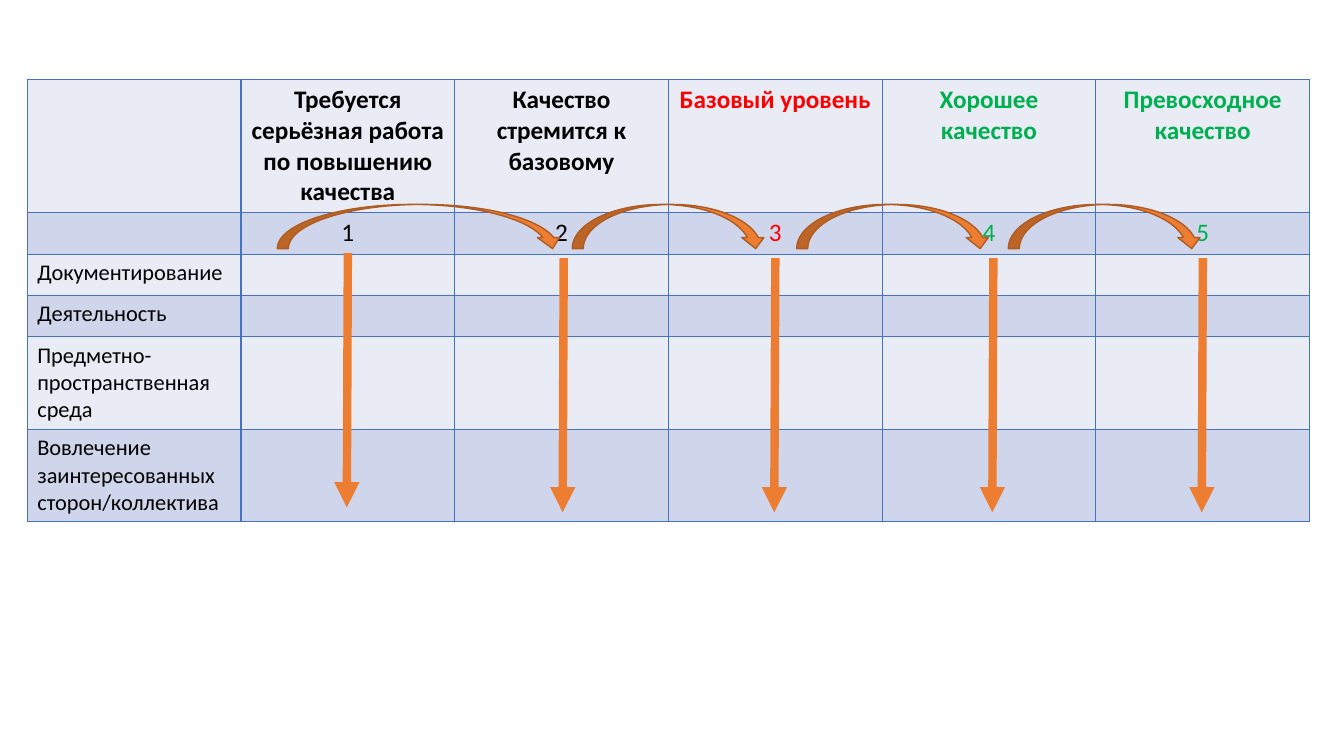
from dataclasses import dataclass

from lxml import etree
from pptx import Presentation
from pptx.dml.color import RGBColor
from pptx.enum.shapes import MSO_CONNECTOR, MSO_SHAPE
from pptx.enum.text import PP_ALIGN
from pptx.oxml.ns import qn
from pptx.util import Inches, Pt

STRAIGHT = MSO_CONNECTOR.STRAIGHT
CURVED_DOWN = MSO_SHAPE.CURVED_DOWN_ARROW
LEFT, CENTER = PP_ALIGN.LEFT, PP_ALIGN.CENTER


@dataclass(frozen=True)
class Theme:
    font: str = "Calibri"
    heading_size: int = 18
    criterion_size: int = 16
    black: str = "000000"
    red: str = "FF0000"
    green: str = "00B050"
    border: str = "4472C4"
    bands: tuple[str, str] = ("E9EBF5", "CFD5EA")
    arrow: str = "ED7D31"
    arrow_edge: str = "AF5C24"
    arrow_width: int = 6
    thin_width: int = 1


@dataclass(frozen=True)
class Grid:
    """Table origin, column width and single-row height, in inches."""
    left: float = 0.27
    top: float = 0.79
    column: float = 2.12
    row: float = 0.41

    def x(self, columns: float) -> int:
        return Inches(self.left + columns * self.column)

    def y(self, rows: float) -> int:
        return Inches(self.top + rows * self.row)

    def width(self, columns: float) -> int:
        return Inches(columns * self.column)

    def height(self, rows: float) -> int:
        return Inches(rows * self.row)


THEME = Theme()
GRID = Grid()


@dataclass(frozen=True)
class Level:
    """A quality level and its down arrow, placed in grid units."""
    title: str
    color: str
    arrow_column: float
    arrow_row: float = 4.32


@dataclass(frozen=True)
class Criterion:
    title: str
    rows: float


@dataclass(frozen=True)
class Step:
    """A curved arrow from one level to the next, in grid columns."""
    start: float
    span: float = 0.91


LEVELS = [
    Level("Требуется серьёзная работа по повышению качества", THEME.black, 1.5, 4.2),
    Level("Качество стремится к базовому", THEME.black, 2.51),
    Level("Базовый уровень", THEME.red, 3.5),
    Level("Хорошее качество", THEME.green, 4.52),
    Level("Превосходное качество", THEME.green, 5.5),
]
CRITERIA = [
    Criterion("Документирование", 1),
    Criterion("Деятельность", 1),
    Criterion("Предметно-пространственная среда", 2.24),
    Criterion("Вовлечение заинтересованных сторон/коллектива", 2.24),
]
STEPS = [Step(1.17, 1.34), Step(2.55), Step(3.6), Step(4.59)]

HEADER_ROWS = [3.22, 1]
DOWN_ARROW_ROWS = 6.15
DOWN_ARROW_LEAN = 0.005
STEP_TOP, STEP_ROWS = 3.02, 1.07


def rgb(color: str) -> RGBColor:
    return RGBColor.from_string(color)


def style_cell(cell, band: str) -> None:
    properties = cell._tc.get_or_add_tcPr()
    for side in ("a:lnL", "a:lnR", "a:lnT", "a:lnB"):
        edge = etree.SubElement(properties, qn(side), w=str(Pt(THEME.thin_width)))
        fill = etree.SubElement(edge, qn("a:solidFill"))
        etree.SubElement(fill, qn("a:srgbClr"), val=THEME.border)
    cell.fill.solid()
    cell.fill.fore_color.rgb = rgb(band)


def write_cell(cell, text: str, color: str, size: int, align, bold: bool = False) -> None:
    paragraph = cell.text_frame.paragraphs[0]
    paragraph.alignment = align
    run = paragraph.add_run()
    run.text = text
    font_format = {"name": THEME.font, "size": Pt(size), "bold": bold}
    for name, value in font_format.items():
        setattr(run.font, name, value)
    run.font.color.rgb = rgb(color)


def draw_table(slide) -> None:
    heights = HEADER_ROWS + [criterion.rows for criterion in CRITERIA]
    columns = len(LEVELS) + 1
    rubric = slide.shapes.add_table(
        len(heights), columns, GRID.x(0), GRID.y(0),
        GRID.width(columns), GRID.height(sum(heights))).table
    for flag, value in {"first_row": False, "horz_banding": False}.items():
        setattr(rubric, flag, value)

    # Grid and banding
    for column in rubric.columns:
        column.width = GRID.width(1)
    for index, rows in enumerate(heights):
        rubric.rows[index].height = GRID.height(rows)
        for cell in rubric.rows[index].cells:
            style_cell(cell, THEME.bands[index % 2])

    # Level titles and scores
    for score, level in enumerate(LEVELS, start=1):
        write_cell(rubric.cell(0, score), level.title, level.color,
                   THEME.heading_size, CENTER, bold=True)
        write_cell(rubric.cell(1, score), str(score), level.color,
                   THEME.heading_size, CENTER)

    # Criteria
    for index, criterion in enumerate(CRITERIA, start=len(HEADER_ROWS)):
        write_cell(rubric.cell(index, 0), criterion.title, THEME.black,
                   THEME.criterion_size, LEFT)


def draw_down_arrow(slide, level: Level) -> None:
    arrow = slide.shapes.add_connector(
        STRAIGHT, GRID.x(level.arrow_column), GRID.y(level.arrow_row),
        GRID.x(level.arrow_column - DOWN_ARROW_LEAN),
        GRID.y(level.arrow_row + DOWN_ARROW_ROWS))
    arrow.line.color.rgb = rgb(THEME.arrow)
    arrow.line.width = Pt(THEME.arrow_width)
    etree.SubElement(arrow.line._get_or_add_ln(), qn("a:tailEnd"), type="triangle")
    etree.SubElement(arrow._element.spPr, qn("a:effectLst"))


def draw_step(slide, step: Step) -> None:
    curve = slide.shapes.add_shape(
        CURVED_DOWN, GRID.x(step.start), GRID.y(STEP_TOP),
        GRID.width(step.span), GRID.height(STEP_ROWS))
    curve.shadow.inherit = False
    curve.fill.solid()
    curve.fill.fore_color.rgb = rgb(THEME.arrow)
    curve.line.color.rgb = rgb(THEME.arrow_edge)
    curve.line.width = Pt(THEME.thin_width)


def main() -> None:
    deck = Presentation()
    deck.slide_width, deck.slide_height = Inches(13.33), Inches(7.5)
    slide = deck.slides.add_slide(deck.slide_layouts[6])
    draw_table(slide)
    for level in LEVELS:
        draw_down_arrow(slide, level)
    for step in STEPS:
        draw_step(slide, step)
    deck.save("out.pptx")


if __name__ == "__main__":
    main()
